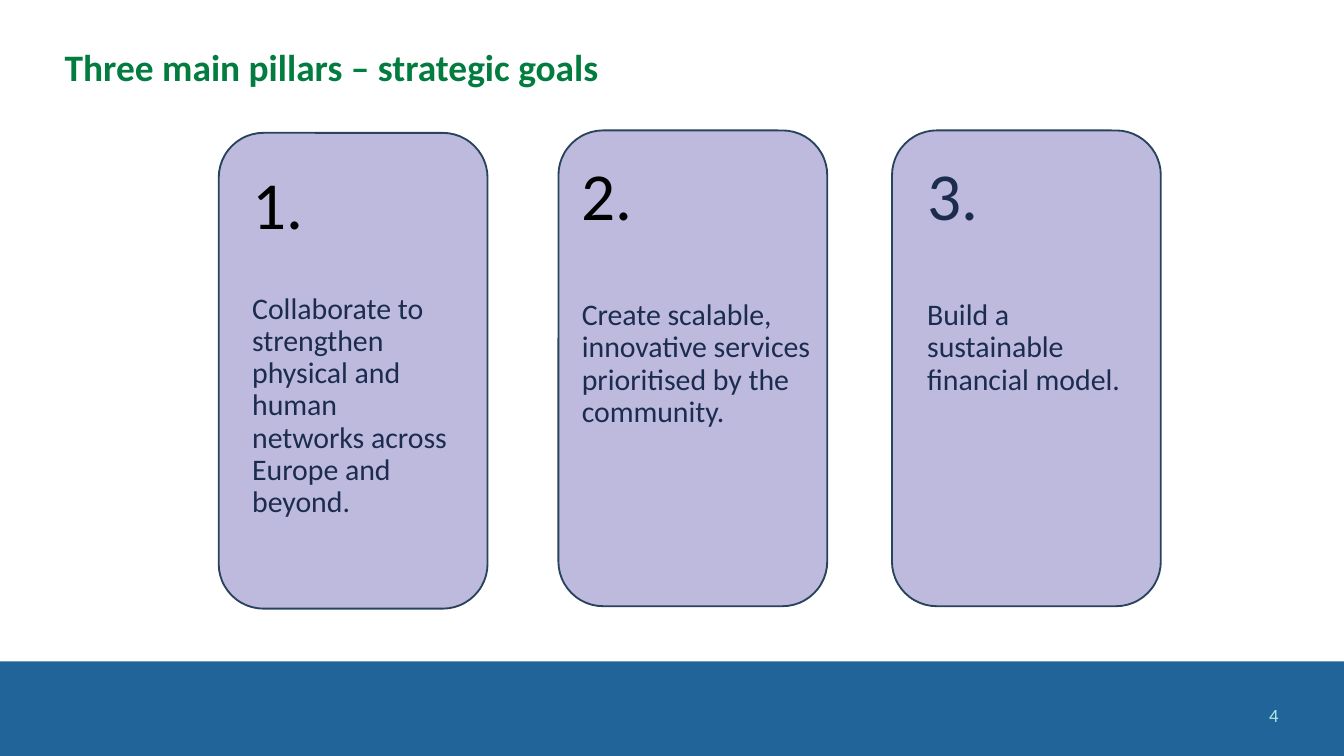
"""Build the slide on three strategic pillars."""
from pptx import Presentation
from pptx import util as u
from pptx.dml.color import RGBColor
from pptx.enum import shapes, text

FONT = "Calibri"
COLORS = {
    "band": "20649A",
    "number": "B4E9E2",
    "title": "037C3F",
    "card": "BDBADD",
    "edge": "28445D",
    "black": "000000",
    "navy": "1C2C4F",
}
CARD_W, CARD_H = 144, 254.9
CARDS = [(117.2, 71.2), (299.2, 69.9), (477.9, 69.9)]
PILLARS = [
    {"digit": "1.", "color": "black", "box": (128, 83.5, 121, 250), "gap": 27, "spacing": 1,
     "goal": "Collaborate to strengthen physical and human networks across Europe and beyond."},
    {"digit": "2.", "color": "black", "box": (304.6, 83.5, 139, 219), "gap": 34.8, "spacing": 0.9,
     "goal": "Create scalable, innovative services prioritised by the community."},
    {"digit": "3.", "color": "navy", "box": (489.6, 83.5, 121.7, 183.6), "gap": 34.8, "spacing": 0.9,
     "goal": "Build a sustainable financial model."},
]


def rgb(name):
    return RGBColor.from_string(COLORS[name])


def add_panel(s, kind, box, fill, edge=None):
    sp = s.shapes.add_shape(kind, *map(u.Pt, box))
    sp.shadow.inherit = False
    sp.fill.solid()
    sp.fill.fore_color.rgb = rgb(fill)
    if edge:
        sp.line.color.rgb = rgb(edge)
        sp.line.width = u.Pt(1)
    else:
        sp.line.fill.background()
    return sp


def add_frame(s, box, anchor=text.MSO_ANCHOR.TOP):
    tf = s.shapes.add_textbox(*map(u.Pt, box)).text_frame
    tf.word_wrap = True
    tf.vertical_anchor = anchor
    return tf


def write(p, words, size, color, bold=False, align=text.PP_ALIGN.LEFT, spacing=1, before=None):
    p.alignment = align
    p.line_spacing = spacing
    if before is not None:
        p.space_before = u.Pt(before)
    r = p.add_run()
    r.text = words
    r.font.name = FONT
    r.font.size = u.Pt(size)
    r.font.bold = bold
    r.font.color.rgb = rgb(color)


def add_pillar_text(s, pillar):
    tf = add_frame(s, pillar["box"])
    write(tf.paragraphs[0], pillar["digit"], 36, pillar["color"], spacing=pillar["spacing"])
    write(tf.add_paragraph(), pillar["goal"], 16, "navy", spacing=0.9, before=pillar["gap"])


def main():
    prs = Presentation()
    prs.slide_width, prs.slide_height = u.Pt(720), u.Pt(405)
    s = prs.slides.add_slide(prs.slide_layouts[6])
    middle = text.MSO_ANCHOR.MIDDLE

    add_panel(s, shapes.MSO_SHAPE.RECTANGLE, (0, 354.4, 720, 50.6), "band")
    number = add_frame(s, (530, 372.5, 162, 21.6), middle)
    write(number.paragraphs[0], "4", 10, "number", align=text.PP_ALIGN.RIGHT)
    title = add_frame(s, (27.6, 10.1, 664.6, 54.7), middle)
    write(title.paragraphs[0], "Three main pillars – strategic goals", 20, "title",
          bold=True, spacing=0.9)

    for (left, top), pillar in zip(CARDS, PILLARS):
        add_panel(s, shapes.MSO_SHAPE.ROUNDED_RECTANGLE, (left, top, CARD_W, CARD_H), "card", "edge")
        add_pillar_text(s, pillar)
    prs.save("out.pptx")


if __name__ == "__main__":
    main()
